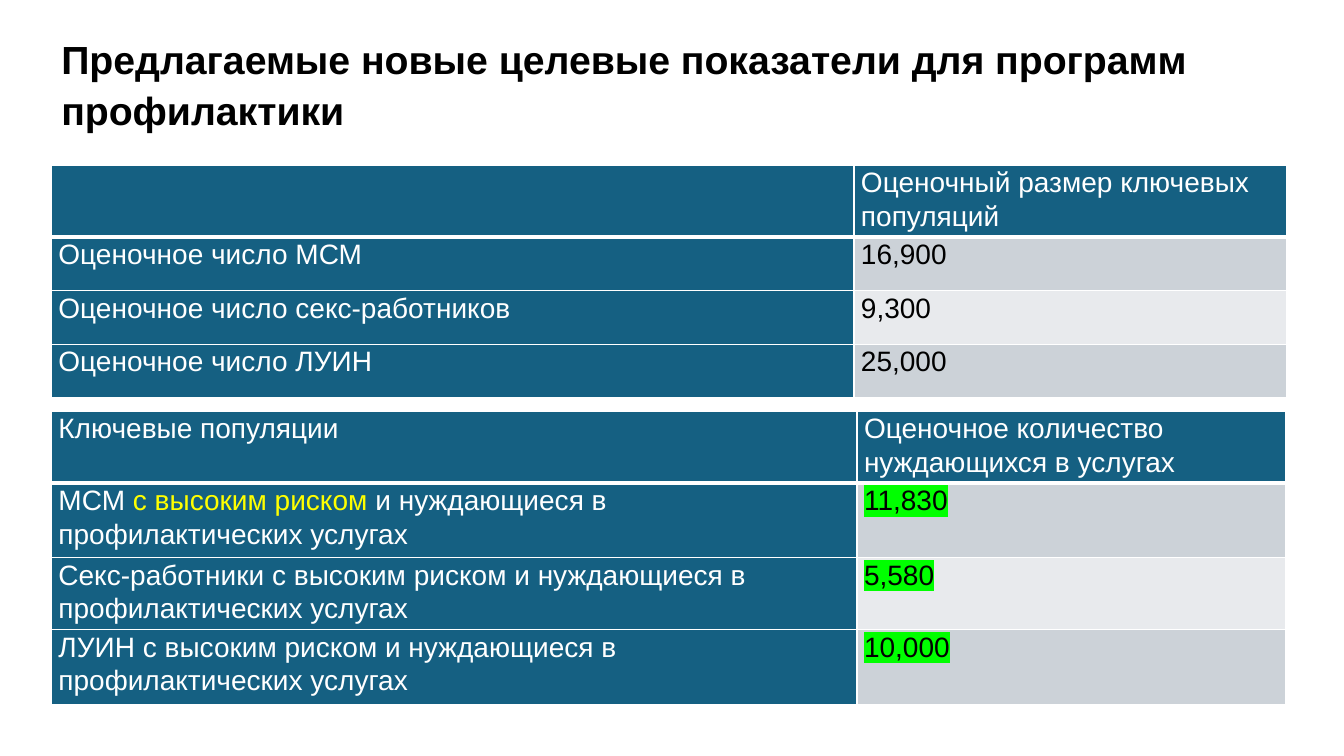
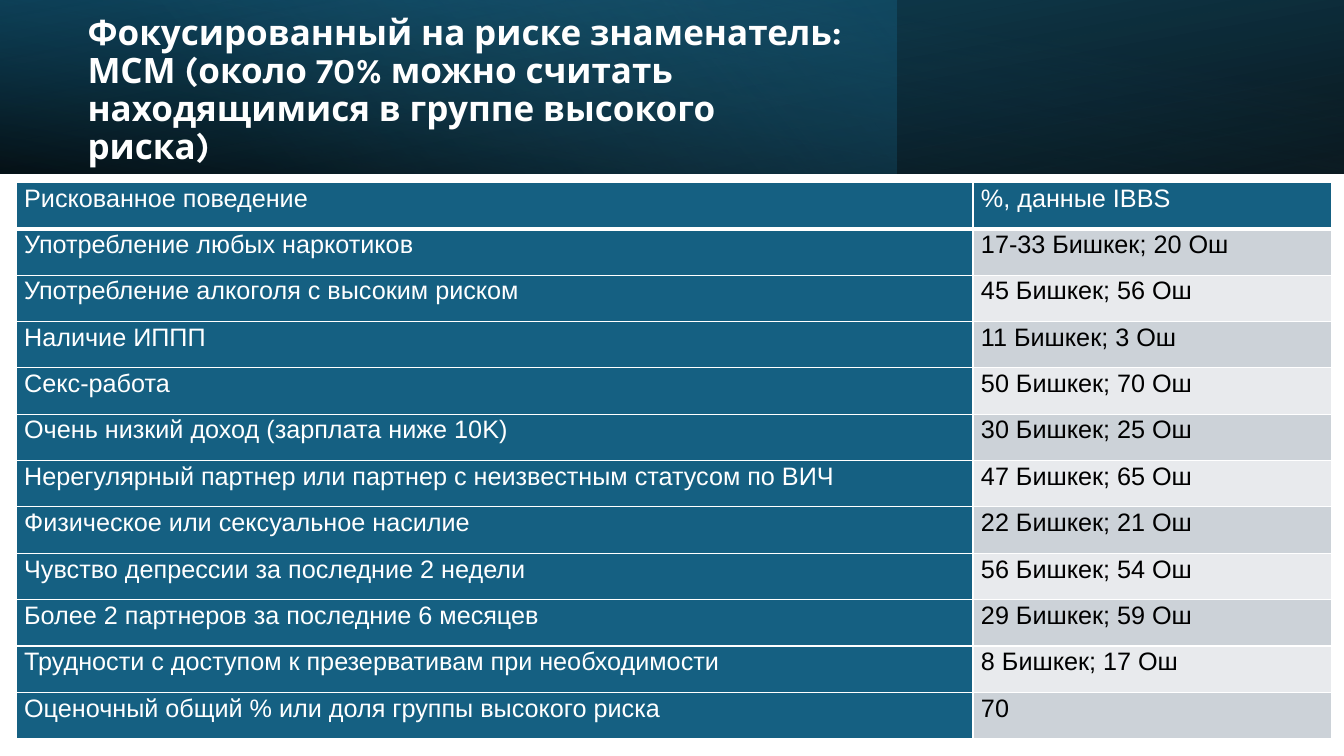
from lxml import etree
from pptx import Presentation
from pptx.dml.color import RGBColor
from pptx.enum.shapes import MSO_SHAPE
from pptx.enum.text import MSO_ANCHOR
from pptx.oxml.ns import qn
from pptx.util import Inches, Pt

RECTANGLE = MSO_SHAPE.RECTANGLE
MIDDLE = MSO_ANCHOR.MIDDLE

WHITE = RGBColor(0xFF, 0xFF, 0xFF)
BLACK = RGBColor(0x00, 0x00, 0x00)
TEAL = RGBColor(0x15, 0x60, 0x82)
DARK_TEAL = RGBColor(0x10, 0x48, 0x62)
SKY = RGBColor(0x46, 0xB1, 0xE1)
BAND_DARK = RGBColor(0xCC, 0xD2, 0xD8)
BAND_LIGHT = RGBColor(0xE8, 0xEA, 0xED)
YELLOW = RGBColor(0xFF, 0xFF, 0x00)
GREEN = RGBColor(0x00, 0xFF, 0x00)

TABLE_FONT = "Arial"
SLIDE_WIDTH, SLIDE_HEIGHT = 13.33, 7.5
BANNER_HEIGHT = 1.72

POPULATION_SIZES = [
    ("", "Оценочный размер ключевых популяций"),
    ("Оценочное число МСМ", "16,900"),
    ("Оценочное число секс-работников", "9,300"),
    ("Оценочное число ЛУИН", "25,000"),
]
PEOPLE_IN_NEED = [
    ("Ключевые популяции", "Оценочное количество нуждающихся в услугах"),
    ("МСМ с высоким риском и нуждающиеся в профилактических услугах", "11,830"),
    ("Секс-работники с высоким риском и нуждающиеся в профилактических услугах", "5,580"),
    ("ЛУИН с высоким риском и нуждающиеся в профилактических услугах", "10,000"),
]
RISK_BEHAVIOURS = [
    ("Рискованное поведение", "%, данные IBBS"),
    ("Употребление любых наркотиков", "17-33 Бишкек; 20 Ош"),
    ("Употребление алкоголя с высоким риском", "45 Бишкек; 56 Ош"),
    ("Наличие ИППП", "11 Бишкек; 3 Ош"),
    ("Секс-работа", "50 Бишкек; 70 Ош"),
    ("Очень низкий доход (зарплата ниже 10K)", "30 Бишкек; 25 Ош"),
    ("Нерегулярный партнер или партнер с неизвестным статусом по ВИЧ", "47 Бишкек; 65 Ош"),
    ("Физическое или сексуальное насилие", "22 Бишкек; 21 Ош"),
    ("Чувство депрессии за последние 2 недели", "56 Бишкек; 54 Ош"),
    ("Более 2 партнеров за последние 6 месяцев", "29 Бишкек; 59 Ош"),
    ("Трудности с доступом к презервативам при необходимости", "8 Бишкек; 17 Ош"),
    ("Оценочный общий % или доля группы высокого риска", "70"),
]


def format_run(run, font_name, size, color, bold=False):
    run.font.name = font_name
    run.font.size = Pt(size)
    run.font.bold = bold
    run.font.color.rgb = color


def highlight_run(run, color):
    highlight = etree.Element(qn("a:highlight"))
    etree.SubElement(highlight, qn("a:srgbClr"), val=str(color))
    run.font._element.find(qn("a:solidFill")).addnext(highlight)


def add_title(slide, box, text, font_name, size, color, line_spacing):
    title = slide.shapes.add_textbox(*map(Inches, box))
    text_frame = title.text_frame
    text_frame.word_wrap = True
    text_frame.vertical_anchor = MIDDLE
    text_frame.text = text
    paragraph = text_frame.paragraphs[0]
    paragraph.line_spacing = line_spacing
    paragraph.space_after = Pt(8)
    format_run(paragraph.runs[0], font_name, size, color, bold=True)


# Tables
def set_borders(cell, top, bottom):
    properties = cell._tc.get_or_add_tcPr()
    widths = {"a:lnL": 1, "a:lnR": 1, "a:lnT": top, "a:lnB": bottom}
    for index, (tag, width) in enumerate(widths.items()):
        line = etree.Element(qn(tag), w=str(Pt(width)))
        fill = etree.SubElement(line, qn("a:solidFill"))
        etree.SubElement(fill, qn("a:srgbClr"), val=str(WHITE))
        properties.insert(index, line)


def fill_cell(cell, text, size, inset, color, emphasis=None, highlight=None):
    cell.margin_left = cell.margin_right = Inches(inset)
    cell.margin_top = cell.margin_bottom = 0
    paragraph = cell.text_frame.paragraphs[0]
    paragraph.line_spacing = 1.07
    parts = text.partition(emphasis) if emphasis else (text,)
    for part in filter(None, parts):
        run = paragraph.add_run()
        run.text = part
        format_run(run, TABLE_FONT, size, YELLOW if part == emphasis else color)
        if highlight:
            highlight_run(run, highlight)


def add_data_table(slide, left, top, column_widths, row_heights, rows, size,
                   inset=0.07, emphasis=None, value_highlight=None):
    """Header row and first column are teal; the values alternate two greys."""
    frame = slide.shapes.add_table(
        len(rows), len(column_widths), Inches(left), Inches(top),
        Inches(sum(column_widths)), Inches(sum(row_heights)))
    table = frame.table
    for column, width in zip(table.columns, column_widths):
        column.width = Inches(width)
    for row_index, (height, texts) in enumerate(zip(row_heights, rows)):
        table.rows[row_index].height = Inches(height)
        for column_index, text in enumerate(texts):
            cell = table.cell(row_index, column_index)
            is_value = row_index > 0 and column_index > 0
            band = BAND_DARK if row_index % 2 else BAND_LIGHT
            cell.fill.solid()
            cell.fill.fore_color.rgb = band if is_value else TEAL
            set_borders(cell, top=3 if row_index == 1 else 1,
                        bottom=3 if row_index == 0 else 1)
            fill_cell(cell, text, size, inset,
                      color=BLACK if is_value else WHITE,
                      emphasis=emphasis if row_index == 1 else None,
                      highlight=value_highlight if is_value else None)


# Banner
def add_gradient_layer(slide, width, stops, angle, rotation=0, flip=False):
    """Each stop is (position %, colour, opacity %); angle runs clockwise."""
    layer = slide.shapes.add_shape(RECTANGLE, 0, 0, Inches(width), Inches(BANNER_HEIGHT))
    layer.shadow.inherit = False
    layer.line.fill.background()
    layer.rotation = rotation
    properties = layer._element.spPr
    if flip:
        properties.find(qn("a:xfrm")).set("flipH", "1")
    layer.fill.gradient()
    layer.fill.gradient_angle = 360 - angle
    for gradient_stop, (position, color, _) in zip(layer.fill.gradient_stops, stops):
        gradient_stop.position = position / 100
        gradient_stop.color.rgb = color
    color_elements = properties.find(qn("a:gradFill")).iter(qn("a:srgbClr"))
    for element, (_, _, opacity) in zip(list(color_elements), stops):
        etree.SubElement(element, qn("a:alpha"), val=str(opacity * 1000))


def add_banner(slide):
    add_gradient_layer(slide, SLIDE_WIDTH, [(0, BLACK, 96), (100, DARK_TEAL, 100)],
                       100, rotation=180, flip=True)
    add_gradient_layer(slide, 8.89, [(0, TEAL, 41), (74, SKY, 0)], 140)
    add_gradient_layer(slide, SLIDE_WIDTH, [(0, BLACK, 63), (78, TEAL, 15)],
                       260, flip=True)


# Slides
def build_targets_slide(slide):
    add_title(slide, (0.51, 0.4, 12.24, 0.84),
              "Предлагаемые новые целевые показатели для программ профилактики",
              "Arial", 28, BLACK, 1.07)
    add_data_table(slide, 0.51, 4.08, (7.99, 4.25), (0.71, 0.74, 0.66, 0.74),
                   PEOPLE_IN_NEED, 20, emphasis="с высоким риском ",
                   value_highlight=GREEN)
    add_data_table(slide, 0.51, 1.64, (7.96, 4.29), (0.65, 0.53, 0.53, 0.53),
                   POPULATION_SIZES, 20)


def build_risk_slide(slide):
    add_banner(slide)
    add_title(slide, (0.77, 0.27, 7.72, 1.27),
              "Фокусированный на риске знаменатель: МСМ (около 70% можно считать "
              "находящимися в группе высокого риска)",
              "Karla", 25, WHITE, 0.9)
    add_data_table(slide, 0.16, 1.81, (9.49, 3.56), [0.46] * len(RISK_BEHAVIOURS),
                   RISK_BEHAVIOURS, 18, inset=0.08)


def main():
    presentation = Presentation()
    presentation.slide_width = Inches(SLIDE_WIDTH)
    presentation.slide_height = Inches(SLIDE_HEIGHT)
    blank_layout = presentation.slide_layouts[6]
    for build_slide in (build_targets_slide, build_risk_slide):
        build_slide(presentation.slides.add_slide(blank_layout))
    presentation.save("out.pptx")


if __name__ == "__main__":
    main()
